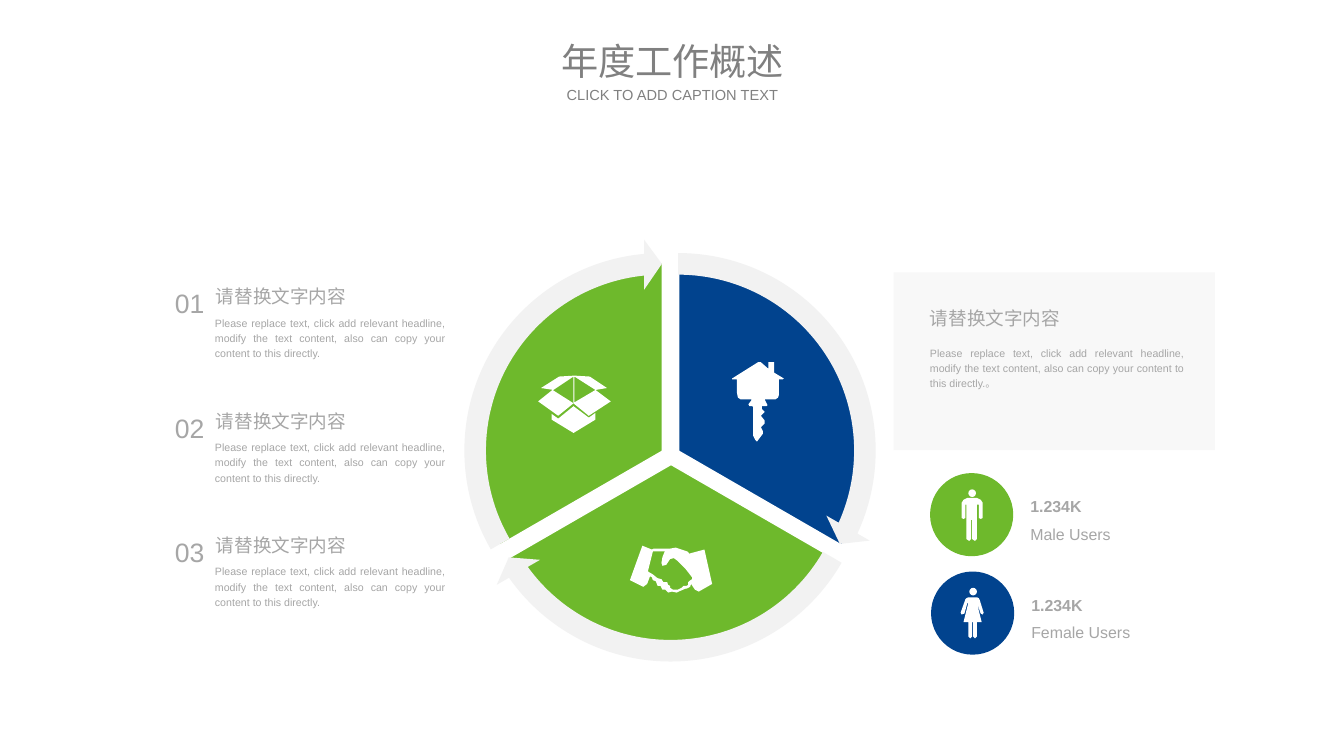
from lxml import etree
from pptx import Presentation
from pptx.dml.color import RGBColor
from pptx.enum.shapes import MSO_SHAPE as Shape
from pptx.enum.text import MSO_ANCHOR as Anchor, MSO_AUTO_SIZE as AutoSize, PP_ALIGN as Align
from pptx.oxml.ns import qn
from pptx.util import Pt

PX = 9144  # EMU in one px, 100 px to the inch
WHITE, PALE, GREY, DARK_GREY = "FFFFFF", "F2F2F2", "A6A6A6", "808080"
GREEN, BLUE = "6EB92C", "01438E"
HEADING = "请替换文字内容"
BODY = ("Please replace text, click add relevant headline, modify the text content, "
        "also can copy your content to this directly.")

HANDSHAKE = [
    [(737, 575), (722, 579), (722, 580), (719, 577), (707, 573), (701, 574), (684, 574),
     (682, 575), (672, 571), (659, 607), (673, 614), (677, 611), (680, 603), (682, 604),
     (683, 607), (686, 608), (688, 613), (691, 613), (693, 617), (696, 617), (699, 620),
     (703, 619), (708, 620), (710, 619), (717, 616), (718, 616), (722, 614), (723, 611),
     (727, 617), (731, 619), (745, 611)],
    [(721, 608), (720, 609), (720, 612), (718, 613), (715, 613), (713, 615), (709, 617),
     (704, 617), (701, 615), (701, 613), (699, 612), (698, 609), (694, 609), (692, 606),
     (688, 605), (683, 601), (678, 598), (678, 597), (683, 577), (696, 577), (695, 578),
     (693, 583), (692, 589), (693, 592), (697, 591), (701, 585), (705, 584), (709, 587),
     (717, 595), (724, 604), (724, 606)],
]
BOX_FLAPS = [[(600, 422), (616, 435), (639, 420), (623, 408), (601, 421), (601, 394), (623, 408),
              (635, 406), (617, 394), (601, 393), (585, 394), (566, 406), (579, 408), (600, 394)]]
BOX_SIDE = [[(563, 420), (584, 435), (600, 422), (578, 408)]]
BOX_BASE = [[(600, 425), (584, 438), (577, 433), (577, 439), (600, 453), (623, 439),
             (623, 432), (616, 437)]]
HOUSE_KEY = [[
    (771, 411), (771, 397), (766, 397), (766, 396), (793, 379), (796, 379), (804, 386), (804, 379),
    (810, 379), (810, 390), (820, 396), (819, 397), (815, 397), (815, 413), (814, 416), (811, 418),
    (800, 418), (803, 424), (802, 425), (797, 425), (797, 428), (800, 431), (796, 435), (800, 440),
    (800, 443), (796, 447), (798, 451), (798, 454), (792, 462), (790, 460), (788, 456), (788, 426),
    (787, 425), (784, 425), (783, 423), (786, 419), (786, 418), (775, 418), (772, 416)]]
MAN = [[
    (1022, 521), (1012, 521), (1008, 523), (1006, 526), (1006, 542), (1008, 543), (1010, 542),
    (1010, 528), (1011, 528), (1011, 564), (1014, 566), (1016, 564), (1016, 544), (1017, 544),
    (1017, 564), (1020, 566), (1022, 564), (1022, 528), (1024, 528), (1024, 542), (1026, 543),
    (1028, 542), (1028, 526), (1026, 523)]]
WOMAN = [[
    (1029, 641), (1025, 628), (1024, 626), (1022, 625), (1013, 625), (1011, 626), (1010, 627),
    (1005, 641), (1006, 643), (1009, 642), (1012, 631), (1013, 631), (1008, 651), (1013, 651),
    (1013, 666), (1015, 668), (1017, 666), (1017, 651), (1018, 651), (1018, 666), (1020, 668),
    (1022, 666), (1022, 651), (1027, 651), (1022, 631), (1026, 642), (1028, 643)]]


def colour(code):
    return RGBColor.from_string(code)


def angle(degrees):
    """Give an angle in the units that shape adjustments use."""
    return degrees % 360 * 0.6


class SlidePainter:
    def __init__(self, slide, font="Arial"):
        self.shapes = slide.shapes
        self.font = font

    def paint(self, shape, fill, outline=None, alpha=None):
        shape.shadow.inherit = False
        shape.fill.solid()
        shape.fill.fore_color.rgb = colour(fill)
        if alpha:
            tint = shape.fill._xPr.find(qn("a:solidFill"))[0]
            etree.SubElement(tint, qn("a:alpha")).set("val", str(alpha * 1000))
        if outline:
            shape.line.color.rgb = colour(outline)
            shape.line.width = Pt(1)
        else:
            shape.line.fill.background()

    def preset(self, kind, at, fill, adjustments=(), **style):
        shape = self.shapes.add_shape(kind, *(value * PX for value in at))
        for index, value in enumerate(adjustments):
            shape.adjustments[index] = value
        self.paint(shape, fill, **style)

    def icon(self, outlines):
        """Draw one white shape; outlines after the first are holes."""
        first, *holes = outlines
        builder = self.shapes.build_freeform(*first[0], scale=PX)
        builder.add_line_segments(first[1:], close=True)
        for hole in holes:
            builder.move_to(*hole[0])
            builder.add_line_segments(hole[1:], close=True)
        self.paint(builder.convert_to_shape(), WHITE)

    def text(self, words, at, size, ink=GREY, bold=False, wrap=False, spacing=1.2,
             align=Align.LEFT, **frame_format):
        box = self.shapes.add_textbox(*(value * PX for value in at))
        frame = box.text_frame
        para = frame.paragraphs[0]
        span = para.add_run()
        span.text = words
        span.font.color.rgb = colour(ink)
        formats = [
            (frame, {"word_wrap": wrap, "auto_size": AutoSize.SHAPE_TO_FIT_TEXT, **frame_format}),
            (para, {"alignment": align, "line_spacing": spacing}),
            (span.font, {"name": self.font, "size": Pt(size), "bold": bold}),
        ]
        for target, values in formats:
            for name, value in values.items():
                setattr(target, name, value)

    def title(self, words, top, height, size):
        margins = {f"margin_{side}": 0 for side in ("left", "top", "right", "bottom")}
        self.text(words, (577, top, 253, height), size, DARK_GREY, wrap=True, spacing=1.0,
                  align=Align.CENTER, vertical_anchor=Anchor.MIDDLE, **margins)

    def numbered_item(self, number, top):
        self.text(f"{number:02d}", (173, top, 51, 47), 20, align=Align.JUSTIFY)
        self.text(HEADING, (216, top, 163, 36), 14)
        self.text(BODY, (215, top + 35, 261, 57), 8, wrap=True, align=Align.JUSTIFY)

    def cycle(self, sectors):
        """Draw equal pie sectors, then the arrows that run round them."""
        step = 360 / len(sectors)
        for index, (left, top, fill) in enumerate(sectors):
            start = 270 + step * index
            self.preset(Shape.PIE, (left, top, 394, 394), fill,
                        (angle(start), angle(start + step)), outline=WHITE)
        for index, (left, top, _) in enumerate(sectors):
            start = 270 + step * index
            self.preset(Shape.CIRCULAR_ARROW, (left - 25, top - 25, 443, 443), PALE,
                        (0.051, 3.275, angle(start + step - 5.46), angle(start), 0.059))

    def user_group(self, label, left, top, fill, figure, width):
        self.preset(Shape.OVAL, (left, top, 87, 87), fill)
        self.preset(Shape.OVAL, (left + 40, top + 17, 8, 8), WHITE)
        self.icon(figure)
        self.text("1.234K", (left + 95, top + 16, 74, 32), 12, bold=True)
        self.text(label, (left + 95, top + 45, width, 32), 12)


def main():
    deck = Presentation()
    deck.slide_width, deck.slide_height = 1406 * PX, 791 * PX
    page = SlidePainter(deck.slides.add_slide(deck.slide_layouts[6]))

    page.title("年度工作概述", 39, 49, 28)
    page.title("CLICK TO ADD CAPTION TEXT", 90, 19, 11)
    for index in range(3):
        page.numbered_item(index + 1, 289 + 130 * index)

    page.cycle([(513, 275, BLUE), (505, 289, GREEN), (496, 275, GREEN)])
    for outlines in (HANDSHAKE, BOX_FLAPS, BOX_SIDE, BOX_BASE, HOUSE_KEY):
        page.icon(outlines)

    page.preset(Shape.RECTANGLE, (935, 285, 336, 186), PALE, alpha=50)
    page.text(HEADING, (963, 312, 163, 36), 14)
    page.text(BODY + "。", (963, 355, 286, 59), 8, wrap=True, align=Align.JUSTIFY)
    page.user_group("Male Users", 973, 495, GREEN, MAN, 105)
    page.user_group("Female Users", 974, 598, BLUE, WOMAN, 125)
    deck.save("out.pptx")


if __name__ == "__main__":
    main()
